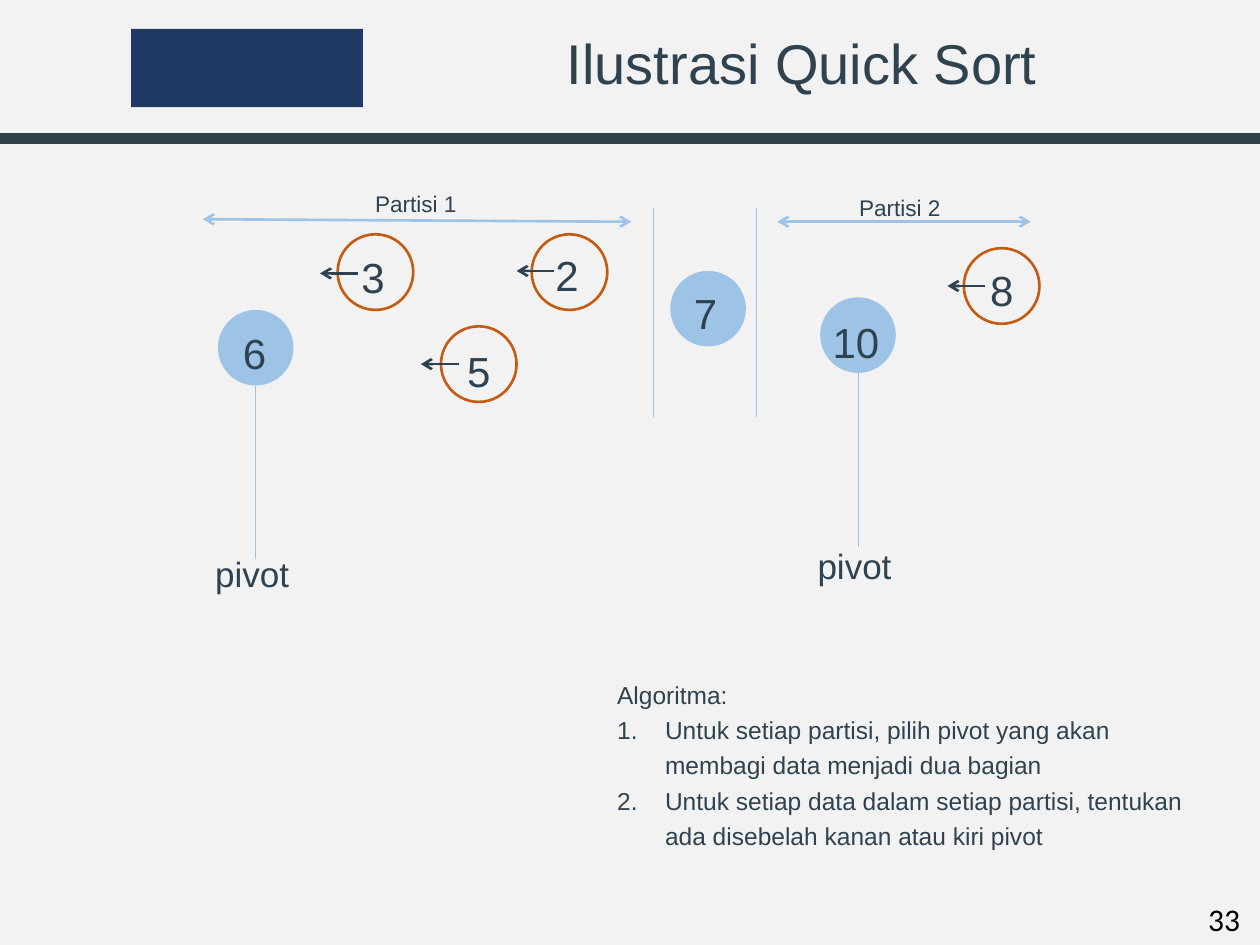
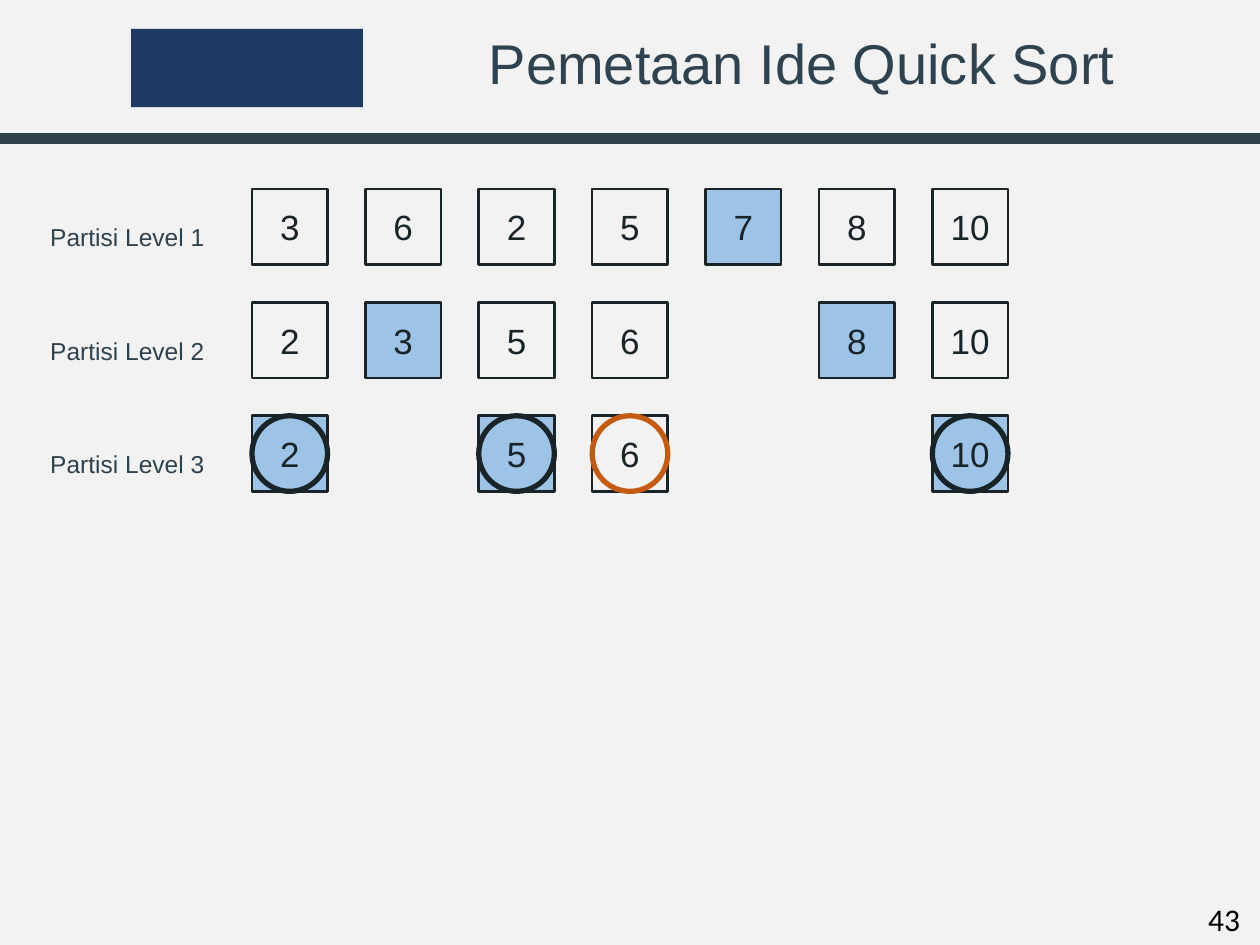
from lxml import etree
from pptx import Presentation, util as u
from pptx.dml.color import RGBColor
from pptx.enum import shapes, text
from pptx.oxml import ns

COLUMNS, ROWS = 100, 75
BALL = 6
CENTER = text.PP_ALIGN.CENTER


def rgb(value):
    return RGBColor.from_string(value)


class Deck:
    paper = "F2F2F2"
    ink = "2F424F"
    band = "2F424C"
    dark = "192429"
    blue = "9DC3E6"
    orange = "C55A11"
    navy = "203864"

    def __init__(self):
        self.presentation = Presentation()
        self.presentation.slide_width = u.Inches(10)
        self.presentation.slide_height = u.Inches(7.5)
        self.slide = None

    def x(self, columns):
        return round(self.presentation.slide_width * columns / COLUMNS)

    def y(self, rows):
        return round(self.presentation.slide_height * rows / ROWS)

    def box(self, left, top, width, height):
        return self.x(left), self.y(top), self.x(width), self.y(height)

    def start(self, title, number):
        layout = self.presentation.slide_layouts[6]
        self.slide = self.presentation.slides.add_slide(layout)
        fill = self.slide.background.fill
        fill.solid()
        fill.fore_color.rgb = rgb(self.paper)
        self.text((94.9, 70.9, 5, 4), [number], 18, font="Calibri", color="000000", wrap=False)
        self.shape(shapes.MSO_SHAPE.RECTANGLE, (10.4, 2.3, 18.4, 6.2), fill=self.navy)
        self.line((0, 11), (COLUMNS, 11), self.band, 6)
        self.text((32.4, 2.3, 62.5, 6), [title], 32, spacing=0.9, align=CENTER,
                  anchor=text.MSO_ANCHOR.MIDDLE)

    def text(self, place, lines, size, spacing=None, font="Arial", color=ink, align=None,
             anchor=text.MSO_ANCHOR.TOP, wrap=True, numbered_from=None):
        frame = self.slide.shapes.add_textbox(*self.box(*place)).text_frame
        frame.word_wrap = wrap
        frame.vertical_anchor = anchor
        for index, words in enumerate(lines):
            paragraph = frame.paragraphs[0] if index == 0 else frame.add_paragraph()
            paragraph.text = words
            if numbered_from is not None and index >= numbered_from:
                self.number(paragraph)
            self.style(paragraph, size, font, color, align, spacing)

    def number(self, paragraph):
        properties = paragraph._p.get_or_add_pPr()
        indent = u.Inches(0.38)
        properties.set("marL", str(indent))
        properties.set("indent", str(-indent))
        etree.SubElement(properties, ns.qn("a:buFont")).set("typeface", "+mj-lt")
        etree.SubElement(properties, ns.qn("a:buAutoNum")).set("type", "arabicPeriod")

    def style(self, paragraph, size, font, color, align=None, spacing=None):
        paragraph.alignment = align
        paragraph.line_spacing = spacing
        paragraph.font.size = u.Pt(size)
        paragraph.font.name = font
        paragraph.font.color.rgb = rgb(color)

    def shape(self, kind, place, fill=None, line=None, weight=1.5):
        shape = self.slide.shapes.add_shape(kind, *self.box(*place))
        shape.shadow.inherit = False
        if fill:
            shape.fill.solid()
            shape.fill.fore_color.rgb = rgb(fill)
        else:
            shape.fill.background()
        if line:
            shape.line.color.rgb = rgb(line)
            shape.line.width = u.Pt(weight)
        else:
            shape.line.fill.background()
        return shape

    def circle(self, left, top, **look):
        return self.shape(shapes.MSO_SHAPE.OVAL, (left, top, BALL, BALL), **look)

    def cell(self, left, top, value, fill):
        cell = self.shape(shapes.MSO_SHAPE.RECTANGLE, (left, top, BALL, BALL), fill, self.dark)
        frame = cell.text_frame
        frame.vertical_anchor = text.MSO_ANCHOR.MIDDLE
        frame.text = str(value)
        self.style(frame.paragraphs[0], 20, "Arial", self.dark, CENTER)

    def line(self, start, end, color, weight, arrows=()):
        line = self.slide.shapes.add_connector(
            shapes.MSO_CONNECTOR.STRAIGHT, self.x(start[0]), self.y(start[1]),
            self.x(end[0]), self.y(end[1]))
        line.line.color.rgb = rgb(color)
        line.line.width = u.Pt(weight)
        for arrow in arrows:
            etree.SubElement(line.line._ln, ns.qn(f"a:{arrow}")).set("type", "arrow")
        etree.SubElement(line._element.spPr, ns.qn("a:effectLst"))


def quick_sort_illustration(deck):
    deck.start("Ilustrasi Quick Sort", "33")

    pivots = [(17.3, 24.6, 16.1, 42.7), (65.1, 23.6, 63.9, 42.1)]
    for left, top, label_left, label_top in pivots:
        center, bottom = left + BALL / 2, top + BALL
        deck.circle(left, top, fill=deck.blue)
        deck.line((center, bottom), (center, bottom + 13.8), deck.blue, 0.5)
        deck.text((label_left, label_top, 8.4, 6), ["pivot"], 20, 1.2)
    deck.circle(53.2, 21.5, fill=deck.blue)

    for left, top in [(26.8, 18.6), (35, 25.9), (42.2, 18.6), (76.5, 19.7)]:
        deck.circle(left, top, line=deck.orange)

    values = [(7, 54.1, 21.5), (3, 27.7, 18.7), (2, 43.1, 18.5), (5, 36.1, 26.1),
              (8, 77.6, 19.7), (10, 65.1, 23.8), (6, 18.3, 24.7)]
    for value, left, top in values:
        width = 6.9 if value >= 10 else 4.3
        deck.text((left, top, width, 6), [str(value)], 24, 1.2)

    for left, top in [(25.4, 21.7), (33.4, 28.9), (75.2, 22.7), (41, 21.5)]:
        deck.line((left, top), (left + 3, top), deck.ink, 1.5, ["headEnd"])
    for column in (51.9, 60):
        deck.line((column, 16.5), (column, 33.1), deck.blue, 0.5)

    partitions = [("Partisi 1", (50.1, 17.6), (16.1, 17.4), (28.8, 14.4)),
                  ("Partisi 2", (81.8, 17.6), (61.7, 17.6), (67.2, 14.7))]
    for name, right, left, corner in partitions:
        deck.line(right, left, deck.blue, 1.5, ["headEnd", "tailEnd"])
        deck.text((*corner, 9, 3.2), [name], 12.9, 1.1)

    deck.text((48, 53, 47.6, 15.8), [
        "Algoritma:",
        "Untuk setiap partisi, pilih pivot yang akan membagi data menjadi dua bagian",
        "Untuk setiap data dalam setiap partisi, tentukan ada disebelah kanan atau kiri pivot",
    ], 14, 1.2, numbered_from=1)


def quick_sort_levels(deck):
    deck.start("Pemetaan Ide Quick Sort", "43")
    levels = [
        ([3, 6, 2, 5, 7, 8, 10], {7}),
        ([2, 3, 5, 6, None, 8, 10], {3, 8}),
        ([2, None, 5, 6, None, None, 10], {2, 5, 10}),
    ]
    pitch = 9
    for level, (values, pivots) in enumerate(levels):
        top = 15 + level * pitch
        deck.text((3, top + 1, 14.8, 4.8), [f"Partisi Level {level + 1}"], 14, 1.5)
        for column, value in enumerate(values):
            if value is None:
                continue
            left = 20 + column * pitch
            is_pivot = value in pivots
            deck.cell(left, top, value, deck.blue if is_pivot else deck.paper)
            if level == len(levels) - 1:
                deck.circle(left, top, line=deck.dark if is_pivot else deck.orange, weight=3)


def main():
    deck = Deck()
    quick_sort_illustration(deck)
    quick_sort_levels(deck)
    deck.presentation.save("out.pptx")


if __name__ == "__main__":
    main()
